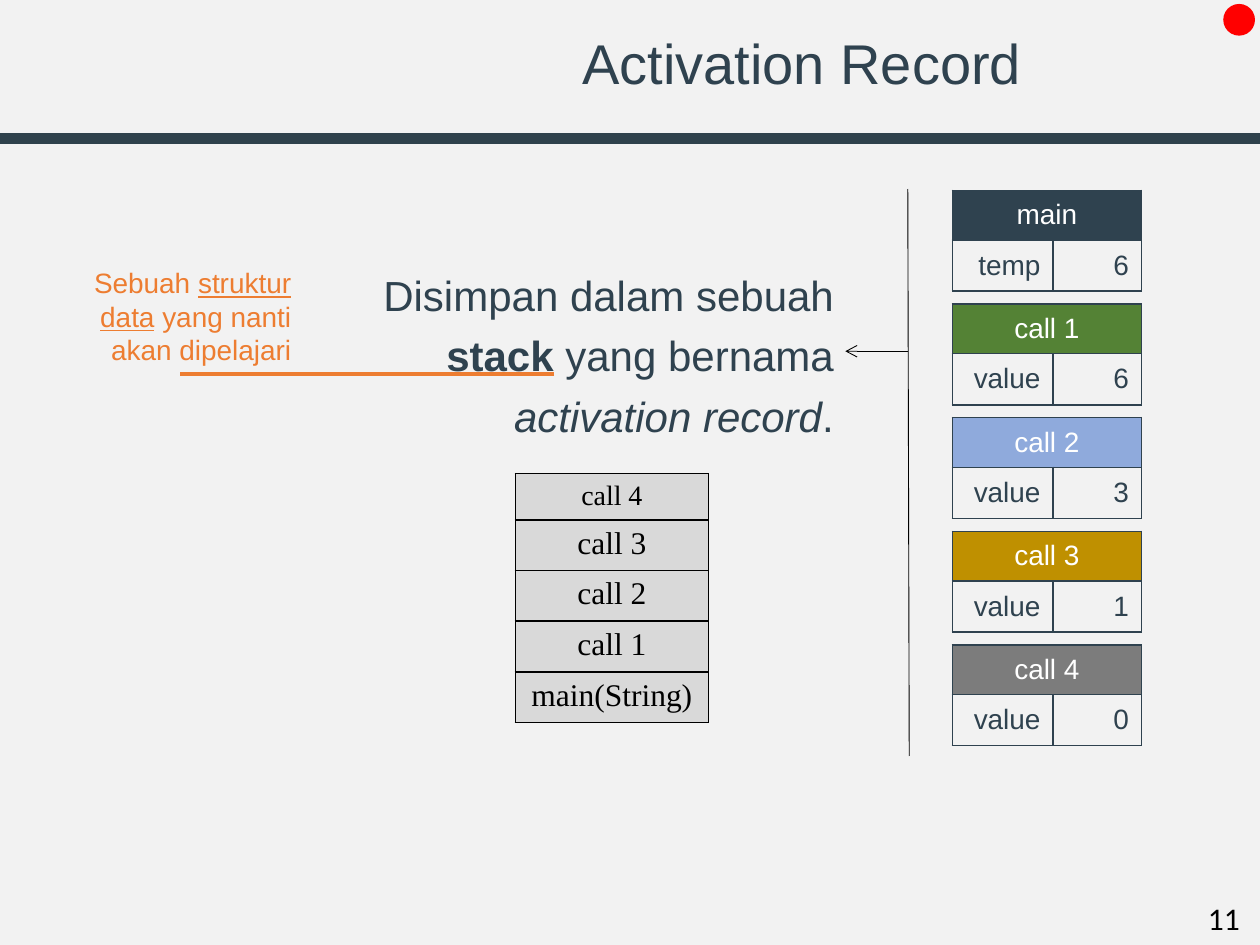
from dataclasses import dataclass, field

from lxml.etree import SubElement
from pptx import Presentation
from pptx.dml.color import RGBColor
from pptx.enum.shapes import MSO_CONNECTOR as Connector, MSO_SHAPE as Shape
from pptx.enum.text import MSO_ANCHOR as Anchor, PP_ALIGN as Align
from pptx.oxml.ns import qn
from pptx.util import Cm, Pt

COLORS = {
    "background": "F2F2F2", "slate": "2F424F", "rule": "2F424C",
    "orange": "ED7D31", "black": "000000", "white": "FFFFFF", "red": "FF0000",
    "light": "D9D9D9", "green": "548235", "blue": "8FAADC", "gold": "BF9000",
    "gray": "7C7C7C",
}


@dataclass
class Span:
    text: str
    formats: dict = field(default_factory=dict)


@dataclass
class Label:
    spans: list[Span]
    area: tuple[float, float, float, float]
    size: int
    color: str
    font: str = "Arial"
    align: Align = Align.RIGHT
    anchor: Anchor = Anchor.TOP
    wrap: bool = True
    line_spacing: float = 1.0


@dataclass
class Line:
    start: tuple[float, float]
    end: tuple[float, float]
    color: str
    width: float
    arrow: bool = False


@dataclass
class Record:
    name: str
    variable: str
    value: str
    color: str


LABELS = [
    Label([Span("11")], (24.1, 18, 1.27, 1.02), 18, "black", "Calibri", Align.LEFT, wrap=False),
    Label([Span("Activation Record")], (8.23, 0.58, 15.88, 1.52), 32, "slate",
          align=Align.CENTER, anchor=Anchor.MIDDLE, line_spacing=0.9),
    Label([Span("Disimpan dalam sebuah "), Span("stack", {"bold": True}),
           Span(" yang bernama "), Span("activation record", {"italic": True}), Span(".")],
          (6.6, 5.1, 10.46, 4.37), 24, "slate", line_spacing=1.2),
    Label([Span("Sebuah "), Span("struktur data", {"underline": True}),
           Span(" yang nanti akan dipelajari")],
          (1.14, 5.23, 4.98, 2.31), 16, "orange"),
]
LINES = [
    Line((0, 2.79), (25.4, 2.79), "rule", 6),
    Line((18.3, 3.81), (18.33, 15.24), "black", 0.5),
    Line((18.31, 7.08), (17.04, 7.08), "black", 0.5, arrow=True),
    Line((11.17, 7.54), (3.63, 7.54), "orange", 2),
]
CALL_STACK = ["call 4", "call 3", "call 2", "call 1", "main(String)"]
RECORDS = [
    Record("main", "temp", "6", "slate"),
    Record("call 1", "value", "6", "green"),
    Record("call 2", "value", "3", "blue"),
    Record("call 3", "value", "1", "gold"),
    Record("call 4", "value", "0", "gray"),
]
RECORD_LEFT, RECORD_TOP, RECORD_STEP = 19.2, 3.84, 2.29


def rgb(color: str) -> RGBColor:
    return RGBColor.from_string(COLORS[color])


def add_span(para, span: Span, size: float, color: str, font: str) -> None:
    run = para.add_run()
    run.text = span.text
    formats = {"name": font, "size": Pt(size), **span.formats}
    for name, value in formats.items():
        setattr(run.font, name, value)
    run.font.color.rgb = rgb(color)


def add_label(page, label: Label) -> None:
    box = page.shapes.add_textbox(*map(Cm, label.area))
    frame = box.text_frame
    frame.word_wrap = label.wrap
    frame.vertical_anchor = label.anchor
    para = frame.paragraphs[0]
    para.alignment = label.align
    para.line_spacing = label.line_spacing
    for span in label.spans:
        add_span(para, span, label.size, label.color, label.font)


def add_line(page, line: Line) -> None:
    connector = page.shapes.add_connector(
        Connector.STRAIGHT, *map(Cm, line.start + line.end))
    connector.line.color.rgb = rgb(line.color)
    connector.line.width = Pt(line.width)
    if line.arrow:
        SubElement(connector.line._get_or_add_ln(), qn("a:tailEnd"), type="arrow")
    SubElement(connector._element.spPr, qn("a:effectLst"))


def add_table(page, left: float, top: float, columns: list[float], rows: list[float]):
    table = page.shapes.add_table(
        len(rows), len(columns), Cm(left), Cm(top), Cm(sum(columns)), Cm(sum(rows))).table
    table.first_row = table.horz_banding = False
    for column, width in zip(table.columns, columns):
        column.width = Cm(width)
    for row, height in zip(table.rows, rows):
        row.height = Cm(height)
    return table


def style_cell(cell, fill: str, border: str) -> None:
    """Draw the four borders first, since the fill must follow them in the XML."""
    properties = cell._tc.get_or_add_tcPr()
    for side in "LRTB":
        edge = SubElement(properties, qn(f"a:ln{side}"), w=str(Pt(1)))
        solid = SubElement(edge, qn("a:solidFill"))
        SubElement(solid, qn("a:srgbClr"), val=COLORS[border])
    cell.fill.solid()
    cell.fill.fore_color.rgb = rgb(fill)


def write_cell(cell, text: str, size: int, color: str, font: str, align: Align) -> None:
    para = cell.text_frame.paragraphs[0]
    para.alignment = align
    add_span(para, Span(text), size, color, font)


def add_call_stack(page, calls: list[str]) -> None:
    table = add_table(page, 10.39, 9.55, [3.89], [0.93] + [1.02] * (len(calls) - 1))
    for index, call in enumerate(calls):
        cell = table.cell(index, 0)
        style_cell(cell, "light", "black")
        write_cell(cell, call, 18 if index else 16, "black", "Times New Roman", Align.CENTER)


def add_record(page, record: Record, top: float) -> None:
    table = add_table(page, RECORD_LEFT, top, [2.03, 1.78], [1, 1.03])
    for row, fill in enumerate((record.color, "background")):
        for column in range(2):
            cell = table.cell(row, column)
            style_cell(cell, fill, "slate")
            cell.vertical_anchor = Anchor.MIDDLE
    table.cell(0, 0).merge(table.cell(0, 1))
    write_cell(table.cell(0, 0), record.name, 16, "white", "Arial", Align.CENTER)
    for column, text in enumerate((record.variable, record.value)):
        write_cell(table.cell(1, column), text, 16, "slate", "Arial", Align.RIGHT)


def add_marker(page) -> None:
    marker = page.shapes.add_shape(Shape.OVAL, Cm(24.66), Cm(0.08), Cm(0.64), Cm(0.64))
    marker.shadow.inherit = False
    marker.fill.solid()
    marker.fill.fore_color.rgb = rgb("red")
    marker.line.fill.background()


def main() -> None:
    deck = Presentation()
    deck.slide_width, deck.slide_height = Cm(25.4), Cm(19.05)
    page = deck.slides.add_slide(deck.slide_layouts[6])
    page.background.fill.solid()
    page.background.fill.fore_color.rgb = rgb("background")
    for label in LABELS:
        add_label(page, label)
    for line in LINES:
        add_line(page, line)
    add_call_stack(page, CALL_STACK)
    for index, record in enumerate(RECORDS):
        add_record(page, record, RECORD_TOP + index * RECORD_STEP)
    add_marker(page)
    deck.save("out.pptx")


if __name__ == "__main__":
    main()
